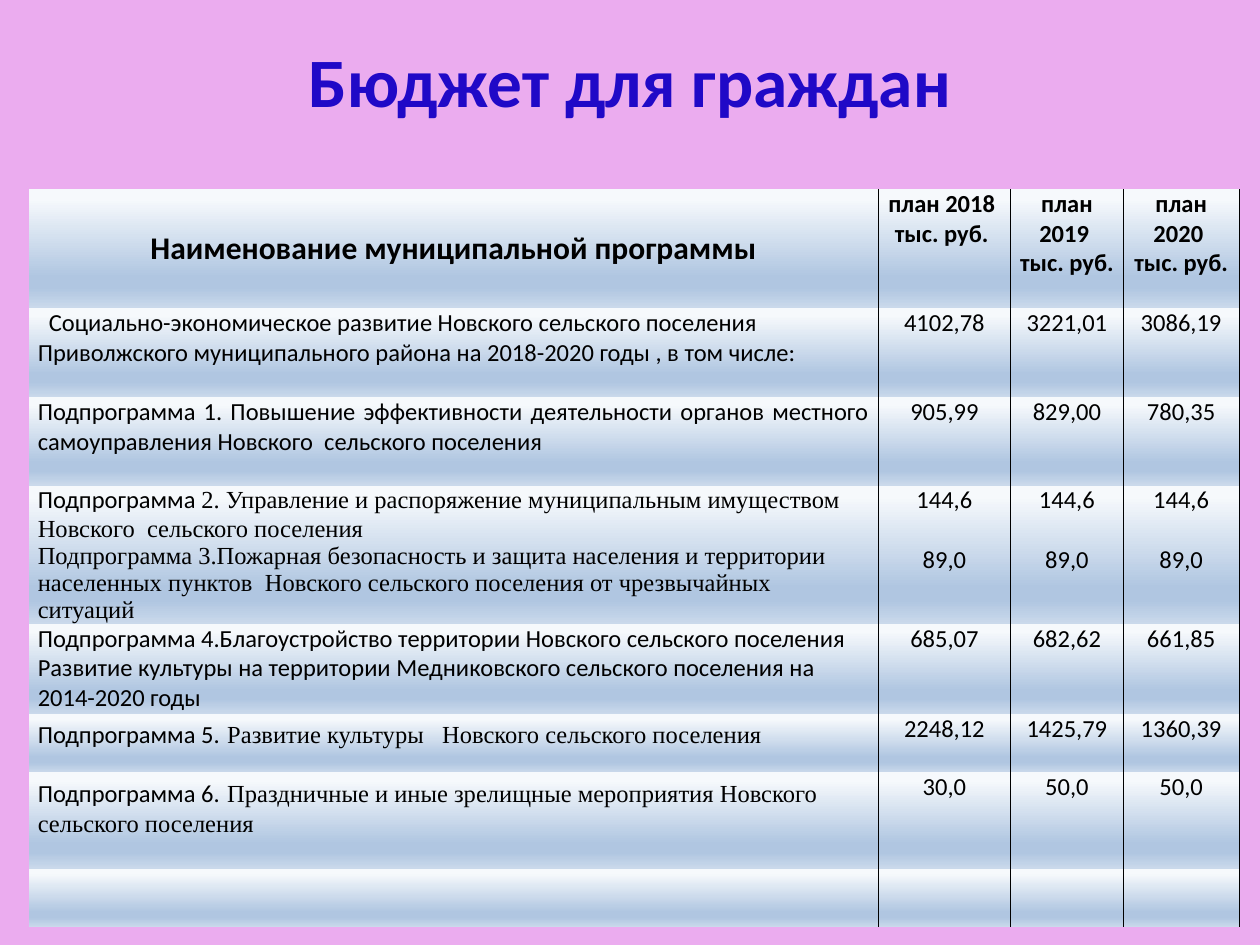
from lxml import etree
from pptx import Presentation
from pptx.dml.color import RGBColor
from pptx.enum import text
from pptx.oxml import ns
from pptx.util import Pt

SANS, SERIF = "Calibri", "Times New Roman"
CENTER, LEFT, JUSTIFY = text.PP_ALIGN.CENTER, text.PP_ALIGN.LEFT, text.PP_ALIGN.JUSTIFY
NO_STYLE = "{2D5ABB26-0587-4C30-8999-92F81FD0307C}"
GRADIENT = ((8, "F6F9FC"), (74, "B0C6E1"), (83, "B0C6E1"), (100, "CAD9EB"))

COLUMN_WIDTHS = (485.2, 75.8, 64.2, 66.4)
ROW_HEIGHTS = (68, 51, 50.5, 79, 51.5, 33.5, 55, 33.5)
YEARS = (2018, 2019, 2020)
WIDE_SPACE = (" ", {"size": 18, "bold": True})

# Each program: paragraphs made of (text, style) runs, then the values by year.
PROGRAMS = [
    ([[("Социально-экономическое развитие Новского сельского поселения Приволжского "
        "муниципального района на 2018-2020 годы , в том числе:", {})]],
     [["4102,78"], ["3221,01"], ["3086,19"]]),
    ([[("Подпрограмма 1. Повышение эффективности деятельности органов местного "
        "самоуправления Новского  сельского поселения ", {})]],
     [["905,99"], ["829,00"], ["780,35"]]),
    ([[("Подпрограмма ", {}),
       ("2. Управление и распоряжение муниципальным имуществом Новского  сельского поселения",
        {"font": SERIF})],
      [("Подпрограмма 3.Пожарная безопасность и защита населения и территории населенных "
        "пунктов  Новского сельского поселения от чрезвычайных ситуаций", {"font": SERIF})]],
     [["144,6", "89,0"]] * 3),
    ([[("Подпрограмма 4.Благоустройство территории Новского сельского поселения", {})],
      [("Развитие культуры на территории Медниковского сельского поселения на 2014-2020 годы",
        {})]],
     [["685,07"], ["682,62"], ["661,85"]]),
    ([[("Подпрограмма 5.", {}), WIDE_SPACE,
       ("Развитие культуры   Новского сельского поселения", {"font": SERIF})]],
     [["2248,12"], ["1425,79"], ["1360,39"]]),
    ([[("Подпрограмма 6.", {}), WIDE_SPACE,
       ("Праздничные и иные зрелищные мероприятия Новского сельского поселения",
        {"font": SERIF})]],
     [["30,0"], ["50,0"], ["50,0"]]),
]


def color(value):
    return RGBColor.from_string(value)


def add_xml(parent, tag, **attributes):
    return etree.SubElement(parent, ns.qn(tag), attributes)


class BudgetSlide:
    """Holds the table style and the slide being filled."""

    def __init__(self, slide):
        self.slide = slide
        self.size = 14
        self.ink = "000000"

    def background(self, value):
        fill = self.slide.background.fill
        fill.solid()
        fill.fore_color.rgb = color(value)

    def run(self, paragraph, content, size=None, font=SANS, bold=False, ink=None):
        run = paragraph.add_run()
        run.text = content
        run.font.name = font
        run.font.size = Pt(size or self.size)
        run.font.bold = bold
        run.font.color.rgb = color(ink or self.ink)

    def title(self, content):
        title = self.slide.shapes.title
        title.left, title.top, title.width, title.height = Pt(36), Pt(21.6), Pt(648), Pt(90)
        frame = title.text_frame
        frame.vertical_anchor = text.MSO_ANCHOR.TOP
        frame.margin_top = 0
        paragraph = frame.paragraphs[0]
        paragraph.alignment = CENTER
        self.run(paragraph, content, size=39.6, bold=True, ink="2009C7")

    def table(self, left, top):
        frame = self.slide.shapes.add_table(
            len(ROW_HEIGHTS), len(COLUMN_WIDTHS), Pt(left), Pt(top),
            Pt(sum(COLUMN_WIDTHS)), Pt(sum(ROW_HEIGHTS)))
        table = frame.table
        table.first_row = table.horz_banding = False
        table._tbl.tblPr.find(ns.qn("a:tableStyleId")).text = NO_STYLE
        for column, width in zip(table.columns, COLUMN_WIDTHS):
            column.width = Pt(width)
        for row, height in zip(table.rows, ROW_HEIGHTS):
            row.height = Pt(height)
            for index, cell in enumerate(row.cells):
                self.cell_style(cell, left_border=index > 0)
        return table

    def cell_style(self, cell, left_border):
        cell.margin_left = cell.margin_right = Pt(5)
        cell.margin_top = cell.margin_bottom = 0
        properties = cell._tc.get_or_add_tcPr()
        for tag in ("a:lnL", "a:lnR") if left_border else ("a:lnR",):
            line = add_xml(properties, tag, w=str(Pt(0.75)))
            add_xml(add_xml(line, "a:solidFill"), "a:srgbClr", val=self.ink)
        gradient = add_xml(properties, "a:gradFill", rotWithShape="1")
        stops = add_xml(gradient, "a:gsLst")
        for percent, value in GRADIENT:
            stop = add_xml(stops, "a:gs", pos=str(percent * 1000))
            add_xml(stop, "a:srgbClr", val=value)
        add_xml(gradient, "a:lin", ang="5400000", scaled="0")

    def cell_text(self, cell, paragraphs, alignment=CENTER, gap=0):
        """Fill a cell with paragraphs of runs, a gap between them."""
        frame = cell.text_frame
        for index, runs in enumerate(paragraphs):
            paragraph = frame.add_paragraph() if index else frame.paragraphs[0]
            paragraph.alignment = alignment
            if index:
                paragraph.space_before = Pt(gap)
            for content, style in runs:
                self.run(paragraph, content, **style)


def main():
    presentation = Presentation()
    presentation.slide_width, presentation.slide_height = Pt(720), Pt(540)
    budget = BudgetSlide(presentation.slides.add_slide(presentation.slide_layouts[5]))
    budget.background("EBACEF")

    table = budget.table(16.6, 108)
    heading = table.cell(0, 0)
    heading.vertical_anchor = text.MSO_ANCHOR.MIDDLE
    budget.cell_text(heading, [[("Наименование муниципальной программы",
                                 {"size": 18, "bold": True})]])
    for column, year in enumerate(YEARS, 1):
        budget.cell_text(table.cell(0, column), [[(f"план {year}  тыс. руб. ", {"bold": True})]])

    for row, (name, values) in enumerate(PROGRAMS, 1):
        budget.cell_text(table.cell(row, 0), name, JUSTIFY if row == 2 else LEFT)
        for column, amounts in enumerate(values, 1):
            budget.cell_text(table.cell(row, column), [[(amount, {})] for amount in amounts],
                             gap=17)
    first_name = table.cell(1, 0).text_frame.paragraphs[0]
    first_name._p.get_or_add_pPr().set("indent", str(Pt(6.3)))

    budget.title("Бюджет для граждан")
    presentation.save("out.pptx")


if __name__ == "__main__":
    main()
